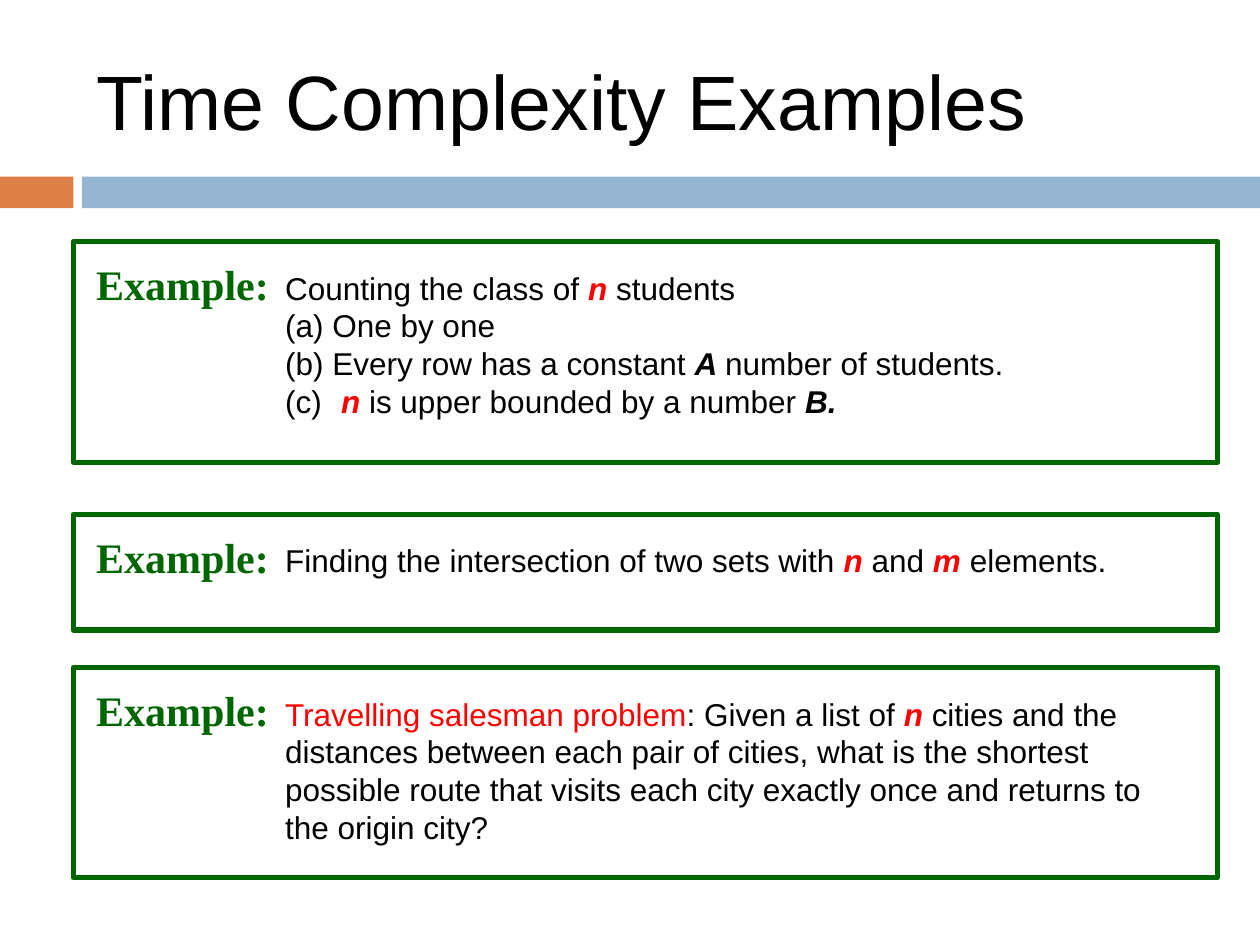
from lxml.etree import SubElement
from pptx import Presentation
from pptx.dml.color import RGBColor
from pptx.enum.shapes import MSO_SHAPE
from pptx.enum.text import MSO_ANCHOR
from pptx.oxml.ns import qn
from pptx.util import Cm, Pt

BLACK = RGBColor(0x00, 0x00, 0x00)
RED = RGBColor(0xFF, 0x00, 0x00)
GREEN = RGBColor(0x00, 0x66, 0x00)
ORANGE = RGBColor(0xDD, 0x80, 0x47)
BLUE = RGBColor(0x94, 0xB6, 0xD2)

# Content: a run is (text, style); styles are (colour, bold italic)
PLAIN, TERM, NAME, TOPIC = (BLACK, False), (RED, True), (BLACK, True), (RED, False)
TITLE = "Time Complexity Examples"
LABEL = "Example:"
# Each example: frame top, frame height, text width (cm), paragraphs;
# paragraphs after the first are lettered (a), (b), (c)
EXAMPLES = [
    (4.87, 4.45, 15.67, [
        [("Counting the class of ", PLAIN), ("n ", TERM), ("students", PLAIN)],
        [("One by one", PLAIN)],
        [("Every row has a constant ", PLAIN), ("A ", NAME),
         ("number of students.", PLAIN)],
        [(" ", PLAIN), ("n", TERM), (" is upper bounded by a number ", PLAIN),
         ("B.", NAME)],
    ]),
    (10.37, 2.33, 18.2, [
        [("Finding the intersection of two sets with ", PLAIN), ("n ", TERM),
         ("and ", PLAIN), ("m ", TERM), ("elements.", PLAIN)],
    ]),
    (13.46, 4.23, 18.2, [
        [("Travelling salesman problem", TOPIC), (": Given a list of ", PLAIN),
         ("n ", TERM),
         ("cities and the distances between each pair of cities, what is the "
          "shortest possible route that visits each city exactly once and "
          "returns to the origin city?", PLAIN)],
    ]),
]

# Layout in cm
SLIDE_WIDTH, SLIDE_HEIGHT = 25.4, 19.05
FRAME_LEFT, FRAME_WIDTH = 1.48, 23.07
LABEL_LEFT, LABEL_DROP = 1.69, 0.21
TEXT_LEFT, TEXT_DROP = 5.5, 0.42
LETTER_INDENT = 0.95
LINE_FACTOR = 1.2


def add_rectangle(slide, left, top, width, height, fill=None, line=None):
    shape = slide.shapes.add_shape(
        MSO_SHAPE.RECTANGLE, Cm(left), Cm(top), Cm(width), Cm(height))
    shape.shadow.inherit = False
    if fill is None:
        shape.fill.background()
    else:
        shape.fill.solid()
        shape.fill.fore_color.rgb = fill
    if line is None:
        shape.line.fill.background()
    else:
        shape.line.color.rgb = line
        shape.line.width = Pt(3)


def add_text(slide, left, top, width, height, paragraphs, size, font="Arial",
             spaced=True):
    box = slide.shapes.add_textbox(Cm(left), Cm(top), Cm(width), Cm(height))
    frame = box.text_frame
    frame.word_wrap = True
    for index, runs in enumerate(paragraphs):
        paragraph = frame.add_paragraph() if index else frame.paragraphs[0]
        paragraph.font.size = Pt(size)
        paragraph.font.name = font
        if spaced:
            paragraph.line_spacing = Pt(size * LINE_FACTOR)
        if index:
            add_letter(paragraph)
        for text, (color, emphasis) in runs:
            run = paragraph.add_run()
            run.text = text
            run.font.color.rgb = color
            run.font.bold = run.font.italic = emphasis
    return frame


def add_letter(paragraph):
    properties = paragraph._p.get_or_add_pPr()
    properties.set("marL", str(Cm(LETTER_INDENT)))
    properties.set("indent", str(-Cm(LETTER_INDENT)))
    number = SubElement(properties, qn("a:buAutoNum"), type="alphaLcParenBoth")
    default_font = properties.find(qn("a:defRPr"))
    if default_font is not None:
        default_font.addprevious(number)


presentation = Presentation()
presentation.slide_width, presentation.slide_height = Cm(SLIDE_WIDTH), Cm(SLIDE_HEIGHT)
slide = presentation.slides.add_slide(presentation.slide_layouts[6])

# Title and the two-colour band
add_rectangle(slide, 0, 3.56, 1.48, 0.64, fill=ORANGE)
add_rectangle(slide, 1.65, 3.56, SLIDE_WIDTH - 1.65, 0.64, fill=BLUE)
title = add_text(slide, LABEL_LEFT, 0.64, 22.65, 2.75, [[(TITLE, PLAIN)]], 44,
                 spaced=False)
title.vertical_anchor = MSO_ANCHOR.MIDDLE

# Framed examples
for top, height, text_width, paragraphs in EXAMPLES:
    add_rectangle(slide, FRAME_LEFT, top, FRAME_WIDTH, height, line=GREEN)
    label = add_text(slide, LABEL_LEFT, top + LABEL_DROP, 4.02, 1.27,
                     [[(LABEL, (GREEN, False))]], 24, "Times New Roman")
    label.paragraphs[0].runs[0].font.bold = True
    add_text(slide, TEXT_LEFT, top + TEXT_DROP, text_width,
             height - TEXT_DROP, paragraphs, 18)

presentation.save("out.pptx")
